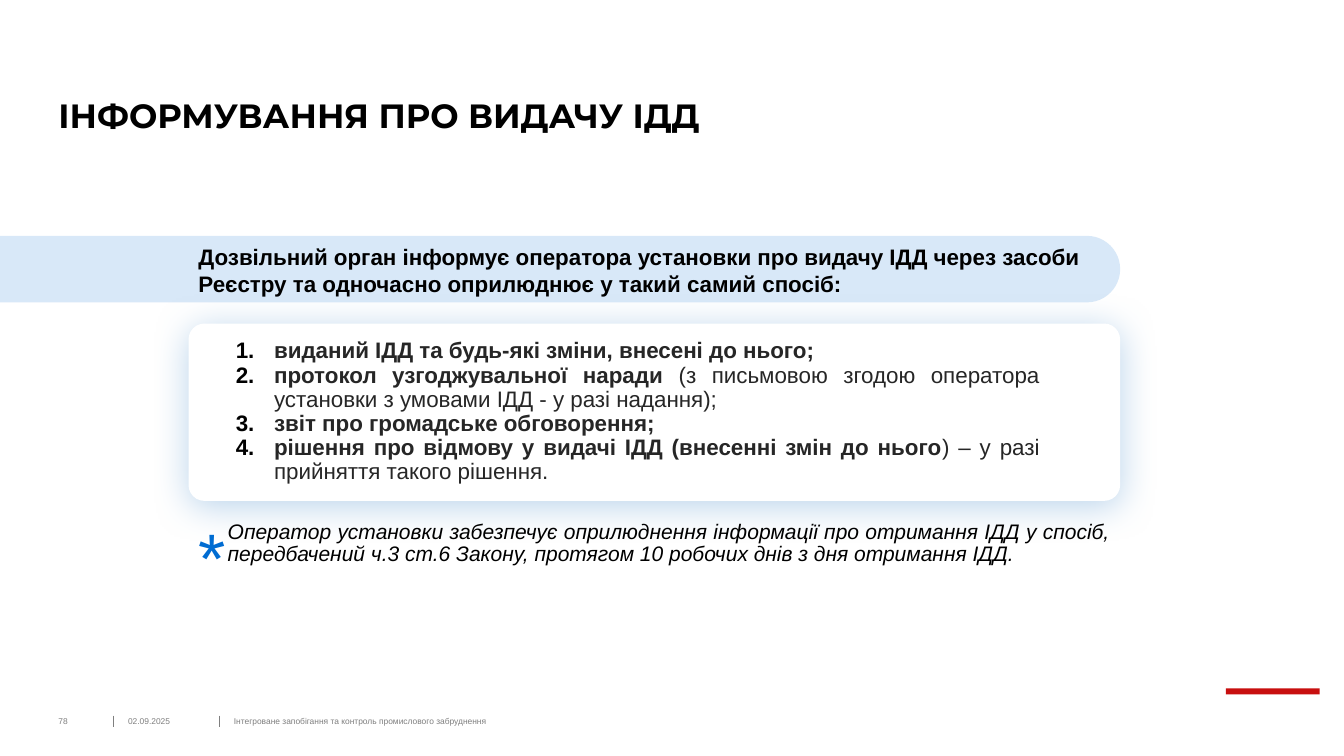
import lxml.etree
import pptx
import pptx.dml.color
import pptx.enum.shapes
import pptx.enum.text
import pptx.oxml.ns
import pptx.util

PX = 9144
COLORS = {
    "black": "000000", "body": "262626", "grey": "7F7F7F", "blue": "006CD2",
    "band": "D8E8F8", "white": "FFFFFF", "red": "C80F0F", "shadow": "BCD5EC",
}
ALIGN = pptx.enum.text.PP_ALIGN
ANCHOR = pptx.enum.text.MSO_ANCHOR
SHAPE = pptx.enum.shapes.MSO_SHAPE
PUBLISHED = [
    [("виданий ІДД та будь-які зміни, внесені до нього;", True)],
    [("протокол узгоджувальної наради ", True),
     ("(з письмовою згодою оператора установки з умовами ІДД - у разі надання);", False)],
    [("звіт про громадське обговорення;", True)],
    [("рішення про відмову у видачі ІДД (внесенні змін до нього", True),
     (") – у разі прийняття такого рішення.", False)],
]


def px(*lengths):
    """Turn px lengths into EMU."""
    return [pptx.util.Emu(length * PX) for length in lengths]


def rgb(name):
    """Look up a named colour."""
    return pptx.dml.color.RGBColor.from_string(COLORS[name])


def add_xml(parent, tag, **attributes):
    """Append a drawing element with the given attributes."""
    child = lxml.etree.SubElement(parent, pptx.oxml.ns.qn(tag))
    for key, value in attributes.items():
        child.set(key, str(value))
    return child


def add_span(para, text, *, size, color="black", font="Arial", bold=False, italic=False):
    """Add one formatted span to a paragraph."""
    span = para.add_run()
    span.text = text
    span.font.name = font
    span.font.size = pptx.util.Pt(size)
    span.font.bold = bold
    span.font.italic = italic
    span.font.color.rgb = rgb(color)


def set_frame(box, anchor=ANCHOR.TOP, inset=(10, 5)):
    """Set wrapping, anchor and insets of a text box."""
    frame = box.text_frame
    frame.word_wrap = True
    frame.auto_size = pptx.enum.text.MSO_AUTO_SIZE.NONE
    frame.vertical_anchor = anchor
    frame.margin_left, frame.margin_top = px(*inset)
    frame.margin_right, frame.margin_bottom = px(*inset)
    return frame


def add_text(page, area, text, *, anchor=ANCHOR.TOP, inset=(10, 5),
             align=ALIGN.LEFT, spacing=1.0, **style):
    """Add a text box holding one paragraph."""
    frame = set_frame(page.shapes.add_textbox(*px(*area)), anchor, inset)
    para = frame.paragraphs[0]
    para.alignment = align
    para.line_spacing = spacing
    add_span(para, text, **style)


def add_panel(page, area, color, kind=SHAPE.ROUNDED_RECTANGLE, radius=None):
    """Add a filled shape without outline."""
    panel = page.shapes.add_shape(kind, *px(*area))
    panel.shadow.inherit = False
    panel.fill.solid()
    panel.fill.fore_color.rgb = rgb(color)
    panel.line.fill.background()
    if radius is not None:
        panel.adjustments[0] = radius
    return panel


def add_title(page, area, text):
    """Place and format the title placeholder."""
    title = page.shapes.title
    title.left, title.top, title.width, title.height = px(*area)
    para = set_frame(title, ANCHOR.BOTTOM, (0, 0)).paragraphs[0]
    para.alignment = ALIGN.LEFT
    para.line_spacing = 0.9
    add_span(para, text, size=24, font="Montserrat", bold=True)


def add_banner(page, area, text):
    """Add the band with its introductory sentence."""
    left, top, width, height = area
    add_panel(page, area, "band", radius=0.5)
    add_text(page, (left + 264, top + 2, width - 285, height - 2), text, size=16, bold=True)


def add_card(page, area, items):
    """Add the shadowed card with the numbered list."""
    left, top, width, height = area
    card = add_panel(page, area, "white", radius=0.09)
    effects = card._element.spPr.find(pptx.oxml.ns.qn("a:effectLst"))
    shadow = add_xml(effects, "a:outerShdw", blurRad=pptx.util.Pt(25.9),
                     dist=pptx.util.Pt(4), dir=5400000, algn="t", rotWithShape=0)
    add_xml(shadow, "a:srgbClr", val=COLORS["shadow"])

    frame = set_frame(page.shapes.add_textbox(
        *px(left + 37, top + 11, width - 107, height - 20)))
    indent = px(38)[0]
    for index, item in enumerate(items):
        para = frame.add_paragraph() if index else frame.paragraphs[0]
        para.alignment = ALIGN.JUSTIFY
        para.line_spacing = 0.9
        properties = para._p.get_or_add_pPr()
        properties.set("marL", str(indent))
        properties.set("indent", str(-indent))
        add_xml(add_xml(properties, "a:buClr"), "a:srgbClr", val=COLORS["black"])
        add_xml(properties, "a:buFont", typeface="+mj-lt")
        add_xml(properties, "a:buAutoNum", type="arabicPeriod")
        for text, bold in item:
            add_span(para, text, size=16, color="body", bold=bold)


def add_note(page, area, text):
    """Add the footnote and its asterisk."""
    left, top, width, height = area
    add_text(page, (left + 29, top + 7, width - 29, height - 27), text,
             size=15, italic=True, align=ALIGN.JUSTIFY, spacing=0.9)
    add_text(page, (left, top, 52, height), "*", size=50, color="blue")


def add_footer(page, area, entries):
    """Add footer entries with a divider before each but the first."""
    left, top, width, height = area
    for offset, entry_width, text in entries:
        start = left + offset
        if offset:
            divider = page.shapes.add_connector(
                pptx.enum.shapes.MSO_CONNECTOR.STRAIGHT,
                *px(start - 14, top, start - 14, top + height))
            divider.line.color.rgb = rgb("grey")
            divider.line.width = pptx.util.Pt(0.75)
            add_xml(divider._element.spPr, "a:effectLst")
        add_text(page, (start, top, entry_width, height - 1), text, size=6,
                 color="grey", anchor=ANCHOR.MIDDLE, inset=(0, 0))
    add_panel(page, (left + width - 93, top - 27, 93, 6), "red", SHAPE.RECTANGLE)


def main():
    """Build and save the deck."""
    deck = pptx.Presentation()
    deck.slide_width, deck.slide_height = px(1333, 750)
    page = deck.slides.add_slide(deck.slide_layouts[5])
    add_title(page, (58, 16, 803, 119), "ІНФОРМУВАННЯ ПРО ВИДАЧУ ІДД")
    add_banner(page, (-77, 234, 1188, 66),
               "Дозвільний орган інформує оператора установки про видачу ІДД через засоби "
               "Реєстру та одночасно оприлюднює у такий самий спосіб:")
    add_card(page, (187, 321, 924, 176), PUBLISHED)
    add_note(page, (187, 505, 924, 94),
             "Оператор установки забезпечує оприлюднення інформації про отримання ІДД у спосіб, "
             "передбачений ч.3 ст.6 Закону, протягом 10 робочих днів з дня отримання ІДД.")
    add_footer(page, (58, 710, 1251, 11), [
        (0, 51, "78"),
        (69, 79, "02.09.2025"),
        (174, 748, "Інтегроване запобігання та контроль промислового забруднення"),
    ])
    deck.save("out.pptx")


if __name__ == "__main__":
    main()
